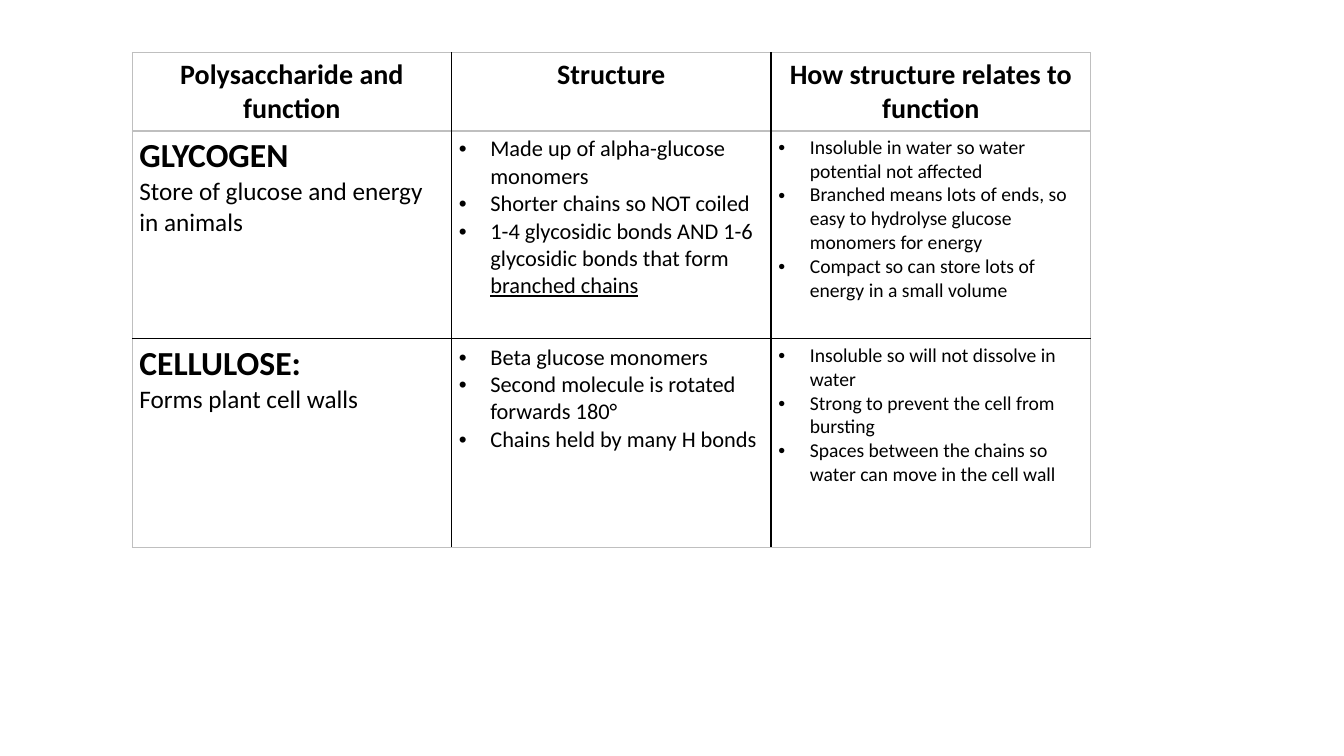
from dataclasses import dataclass

from lxml.etree import SubElement
from pptx import Presentation
from pptx.dml.color import RGBColor as RGB
from pptx.enum.text import PP_ALIGN as ALIGN
from pptx.oxml.ns import qn
from pptx.util import Pt


@dataclass(frozen=True)
class Theme:
    font: str = "Calibri"
    ink: str = "000000"
    edge: str = "BFBFBF"
    name: int = 24
    heading: int = 20
    role: int = 18
    structure: int = 16
    relation: int = 14
    rule: float = 1
    hairline: float = 0.5


THEME = Theme()
LEFT, COL_W = 94.4, 228.2
HEADER_TOP, HEADER_H = 37.5, 55.4
BODY_TOP, BODY_H = 93.3, 148.7
INSET_X, INSET_Y, INDENT = 5.2, 3.6, 22.5

HEADINGS = ["Polysaccharide and function", "Structure", "How structure relates to function"]
POLYSACCHARIDES = [
    (
        ("GLYCOGEN", "Store of glucose and energy in animals"),
        [
            ["Made up of alpha-glucose monomers"],
            ["Shorter chains so NOT coiled"],
            ["1-4 glycosidic bonds AND 1-6 glycosidic bonds that form ", "branched chains"],
        ],
        [
            ["Insoluble in water so water potential not affected"],
            ["Branched means lots of ends, so easy to hydrolyse glucose monomers for energy"],
            ["Compact so can store lots of energy in a small volume"],
        ],
    ),
    (
        ("CELLULOSE:", "Forms plant cell walls"),
        [
            ["Beta glucose monomers"],
            ["Second molecule is rotated forwards 180°"],
            ["Chains held by many H bonds"],
        ],
        [
            ["Insoluble so will not dissolve in water"],
            ["Strong to prevent the cell from bursting"],
            ["Spaces between the chains so water can move in the cell wall"],
        ],
    ),
]


def add_text(p, text, size, bold=False, underline=False):
    r = p.add_run()
    r.text = text
    f = r.font
    f.name, f.size, f.bold, f.underline = THEME.font, Pt(size), bold, underline
    f.color.rgb = RGB.from_string(THEME.ink)


def set_bullet(p):
    pPr = p._p.get_or_add_pPr()
    pPr.set("marL", str(Pt(INDENT)))
    pPr.set("indent", str(-Pt(INDENT)))
    SubElement(pPr, qn("a:buFont"), typeface="Arial")
    SubElement(pPr, qn("a:buChar"), char="•")


def set_border(cell, side, color, width):
    ln = SubElement(cell._tc.get_or_add_tcPr(), qn(f"a:ln{side}"), w=str(Pt(width)))
    fill = SubElement(ln, qn("a:solidFill"))
    SubElement(fill, qn("a:srgbClr"), val=color)


class Deck:
    def __init__(self, theme):
        self.theme = theme
        self.prs = Presentation()
        self.prs.slide_width, self.prs.slide_height = Pt(960), Pt(540)
        self.slide = self.prs.slides.add_slide(self.prs.slide_layouts[6])

    def table(self, top, row_h, rows, cols):
        sp = self.slide.shapes.add_table(
            rows, cols, Pt(LEFT), Pt(top), Pt(COL_W * cols), Pt(row_h * rows)
        )
        tbl = sp.table
        tbl.first_row = tbl.horz_banding = False
        for i in range(rows):
            for j in range(cols):
                self.style_cell(tbl.cell(i, j), i, j, rows, cols)
        return tbl

    def style_cell(self, cell, i, j, rows, cols):
        t = self.theme
        outer = {"L": j == 0, "R": j == cols - 1, "T": i == 0, "B": i == rows - 1}
        for side, is_edge in outer.items():
            set_border(cell, side, *((t.edge, t.hairline) if is_edge else (t.ink, t.rule)))
        cell.fill.background()
        cell.margin_left = cell.margin_right = Pt(INSET_X)
        cell.margin_top = cell.margin_bottom = Pt(INSET_Y)

    def heading(self, cell, text):
        p = cell.text_frame.paragraphs[0]
        p.alignment = ALIGN.CENTER
        add_text(p, text, self.theme.heading, bold=True)

    def summary(self, cell, name, role):
        tf = cell.text_frame
        add_text(tf.paragraphs[0], name, self.theme.name, bold=True)
        add_text(tf.add_paragraph(), role, self.theme.role)

    def bullets(self, cell, items, size):
        tf = cell.text_frame
        for n, (text, *underlined) in enumerate(items):
            p = tf.add_paragraph() if n else tf.paragraphs[0]
            set_bullet(p)
            add_text(p, text, size)
            for part in underlined:
                add_text(p, part, size, underline=True)


def main():
    deck = Deck(THEME)
    body = deck.table(BODY_TOP, BODY_H, len(POLYSACCHARIDES), len(HEADINGS))
    for i, (summary, structure, relation) in enumerate(POLYSACCHARIDES):
        deck.summary(body.cell(i, 0), *summary)
        deck.bullets(body.cell(i, 1), structure, THEME.structure)
        deck.bullets(body.cell(i, 2), relation, THEME.relation)

    header = deck.table(HEADER_TOP, HEADER_H, 1, len(HEADINGS))
    for j, text in enumerate(HEADINGS):
        deck.heading(header.cell(0, j), text)
    deck.prs.save("out.pptx")


if __name__ == "__main__":
    main()
